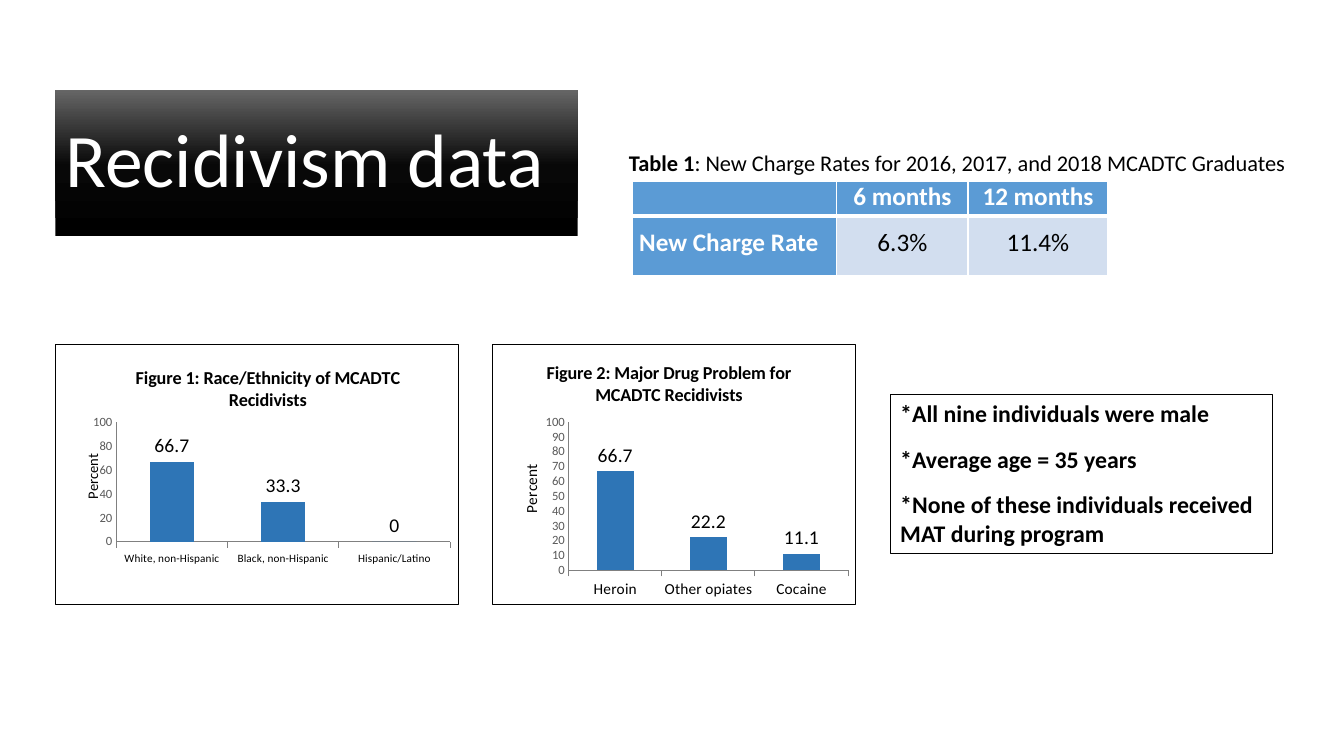
"""Build the recidivism data slide."""
from dataclasses import dataclass

from lxml import etree
from pptx import Presentation
from pptx.chart.data import CategoryChartData
from pptx.dml.color import RGBColor
from pptx.enum.chart import XL_CHART_TYPE, XL_LABEL_POSITION, XL_TICK_LABEL_POSITION, XL_TICK_MARK
from pptx.enum.shapes import MSO_SHAPE
from pptx.enum.text import MSO_ANCHOR, PP_ALIGN
from pptx.oxml import parse_xml
from pptx.oxml.ns import nsdecls, qn
from pptx.util import Inches, Pt

COLUMNS = XL_CHART_TYPE.COLUMN_CLUSTERED
OUTSIDE_END = XL_LABEL_POSITION.OUTSIDE_END
LOW = XL_TICK_LABEL_POSITION.LOW
TICK_NONE, TICK_OUT = XL_TICK_MARK.NONE, XL_TICK_MARK.OUTSIDE
RECTANGLE = MSO_SHAPE.RECTANGLE
TOP, MIDDLE = MSO_ANCHOR.TOP, MSO_ANCHOR.MIDDLE
LEFT, CENTER = PP_ALIGN.LEFT, PP_ALIGN.CENTER


@dataclass(frozen=True)
class Theme:
    font: str = "Calibri"
    black: str = "000000"
    white: str = "FFFFFF"
    header: str = "5B9BD5"
    band: str = "D2DEEF"
    bar: str = "2E75B6"
    axis: str = "808080"
    tick: str = "595959"
    gradient: tuple = ((0, "000000"), (48, "080808"), (100, "666666"))
    title_size: float = 54
    table_size: float = 18
    fact_size: float = 17
    caption_size: float = 16
    label_size: float = 14
    chart_title_size: float = 13
    tick_size: float = 9


class SlideBuilder:
    def __init__(self, slide, theme):
        self.slide = slide
        self.theme = theme

    def style(self, font, size, color, bold=False):
        font.name = self.theme.font
        font.size = Pt(size)
        font.bold = bold
        font.color.rgb = RGBColor.from_string(color)

    def title(self, text, box):
        shape = self.slide.shapes.title
        shape.left, shape.top, shape.width, shape.height = map(Inches, box)
        shape.fill.gradient()
        shape.fill.gradient_angle = 90
        stops = shape._element.spPr.find(qn("a:gradFill")).find(qn("a:gsLst"))
        for stop in list(stops):
            stops.remove(stop)
        for position, color in self.theme.gradient:
            stop = etree.SubElement(stops, qn("a:gs"), pos=str(position * 1000))
            etree.SubElement(stop, qn("a:srgbClr"), val=color)
        shape.text_frame.text = text
        shape.text_frame.vertical_anchor = MIDDLE
        paragraph = shape.text_frame.paragraphs[0]
        paragraph.alignment = LEFT
        paragraph.line_spacing = 0.9
        self.style(paragraph.font, self.theme.title_size, self.theme.white)

    def caption(self, label, text, box):
        frame = self.slide.shapes.add_textbox(*map(Inches, box)).text_frame
        frame.word_wrap = True
        for part, bold in ((label, True), (text, False)):
            run = frame.paragraphs[0].add_run()
            run.text = part
            self.style(run.font, self.theme.caption_size, self.theme.black, bold)

    def fact_box(self, lines, box):
        shape = self.slide.shapes.add_shape(RECTANGLE, *map(Inches, box))
        shape.shadow.inherit = False
        shape.fill.background()
        shape.line.color.rgb = RGBColor.from_string(self.theme.black)
        shape.line.width = Pt(0.75)
        frame = shape.text_frame
        frame.word_wrap = True
        frame.vertical_anchor = TOP
        frame.text = "\n".join(lines)
        for paragraph in frame.paragraphs:
            paragraph.alignment = LEFT
            paragraph.space_after = Pt(12)
            self.style(paragraph.font, self.theme.fact_size, self.theme.black, True)

    def cell_border(self, cell, side, width):
        line = etree.SubElement(cell._tc.get_or_add_tcPr(), qn(f"a:{side}"), w=str(Pt(width)))
        fill = etree.SubElement(line, qn("a:solidFill"))
        etree.SubElement(fill, qn("a:srgbClr"), val=self.theme.white)

    def table(self, rows, box, widths, heights):
        table = self.slide.shapes.add_table(len(rows), len(widths), *map(Inches, box)).table
        for column, width in zip(table.columns, widths):
            column.width = Inches(width)
        for row, height in zip(table.rows, heights):
            row.height = Inches(height)
        for row_index, row in enumerate(rows):
            for column_index, text in enumerate(row):
                cell = table.cell(row_index, column_index)
                heading = row_index == 0 or column_index == 0
                for side in ("lnL", "lnR", "lnT", "lnB"):
                    thick = (row_index, side) in ((0, "lnB"), (1, "lnT"))
                    self.cell_border(cell, side, 3 if thick else 1)
                cell.fill.solid()
                cell.fill.fore_color.rgb = RGBColor.from_string(
                    self.theme.header if heading else self.theme.band)
                cell.margin_left = cell.margin_right = Inches(0.07)
                cell.margin_top = Inches(0.12 if row_index else 0)
                cell.margin_bottom = 0
                cell.text = text
                paragraph = cell.text_frame.paragraphs[0]
                paragraph.alignment = LEFT if row_index and column_index == 0 else CENTER
                self.style(paragraph.font, self.theme.table_size,
                           self.theme.white if heading else self.theme.black, heading)

    def place(self, element, x, y, extra=""):
        layout = parse_xml(
            f'<c:layout {nsdecls("c")}><c:manualLayout>{extra}<c:xMode val="edge"/>'
            f'<c:yMode val="edge"/><c:x val="{x}"/><c:y val="{y}"/></c:manualLayout></c:layout>')
        for old in element.findall(qn("c:layout")):
            element.remove(old)
        text = element.find(qn("c:tx"))
        if text is None:
            element.insert(0, layout)
        else:
            text.addnext(layout)
        return layout[0]

    def chart_heading(self, heading, text, size, bold, position):
        heading.text_frame.text = text
        self.style(heading.text_frame.paragraphs[0].font, size, self.theme.black, bold)
        self.place(heading._element, *position)

    def axis(self, axis, size, color, tick_mark):
        self.style(axis.tick_labels.font, size, color)
        axis.major_tick_mark = tick_mark
        axis.minor_tick_mark = TICK_NONE
        axis.has_major_gridlines = False
        axis.format.line.color.rgb = RGBColor.from_string(self.theme.axis)
        axis.format.line.width = Pt(0.75)

    def column_chart(self, title, values, box, plot_area, title_at, percent_at,
                     category_size, percent_size, step):
        data = CategoryChartData()
        data.categories = list(values)
        data.add_series("Series 1", list(values.values()))
        chart = self.slide.shapes.add_chart(COLUMNS, *map(Inches, box), data).chart
        self.style(chart.font, 10, self.theme.black)
        chart.has_legend = False
        chart.has_title = True
        self.chart_heading(chart.chart_title, title, self.theme.chart_title_size, True, title_at)

        self.axis(chart.category_axis, category_size, self.theme.black, TICK_OUT)
        chart.category_axis.tick_label_position = LOW
        value_axis = chart.value_axis
        self.axis(value_axis, self.theme.tick_size, self.theme.tick, TICK_NONE)
        value_axis.minimum_scale, value_axis.maximum_scale = 0, 100
        value_axis.major_unit = step
        value_axis.has_title = True
        self.chart_heading(value_axis.axis_title, "Percent", percent_size, False, percent_at)
        value_axis.axis_title.text_frame._txBody.bodyPr.set("rot", "-5400000")

        plot = chart.plots[0]
        plot.gap_width = 150
        plot.vary_by_categories = False
        plot.series[0].format.fill.solid()
        plot.series[0].format.fill.fore_color.rgb = RGBColor.from_string(self.theme.bar)
        plot.has_data_labels = True
        labels = plot.data_labels
        labels.show_value = True
        labels.position = OUTSIDE_END
        self.style(labels.font, self.theme.label_size, self.theme.black)

        x, y, width, height = plot_area
        chart_element = chart._chartSpace.find(qn("c:chart"))
        layout = self.place(chart_element.find(qn("c:plotArea")), x, y,
                            '<c:layoutTarget val="inner"/>')
        etree.SubElement(layout, qn("c:w"), val=str(width))
        etree.SubElement(layout, qn("c:h"), val=str(height))
        chart_element.addnext(parse_xml(
            f'<c:spPr {nsdecls("c", "a")}><a:solidFill><a:srgbClr val="{self.theme.white}"/>'
            f'</a:solidFill><a:ln w="{Pt(0.75)}"><a:solidFill>'
            f'<a:srgbClr val="{self.theme.black}"/></a:solidFill></a:ln></c:spPr>'))


def main():
    presentation = Presentation()
    presentation.slide_width, presentation.slide_height = Inches(13.33), Inches(7.5)
    slide = presentation.slides.add_slide(presentation.slide_layouts[5])
    builder = SlideBuilder(slide, Theme())
    builder.title("Recidivism data", (0.55, 0.89, 5.18, 1.45))
    builder.table([("", "6 months", "12 months"), ("New Charge Rate", "6.3%", "11.4%")],
                  (6.27, 1.8, 4.72, 0.93), (2.03, 1.3, 1.39), (0.34, 0.59))
    builder.caption("Table 1", ": New Charge Rates for 2016, 2017, and 2018 MCADTC Graduates",
                    (6.14, 1.43, 6.9, 0.37))
    builder.fact_box(("*All nine individuals were male", "*Average age = 35 years",
                      "*None of these individuals received MAT during program"),
                     (8.83, 3.91, 3.79, 1.58))
    builder.column_chart("Figure 2: Major Drug Problem for MCADTC Recidivists",
                         {"Heroin": 66.7, "Other opiates": 22.2, "Cocaine": 11.1},
                         (4.88, 3.41, 3.61, 2.59), (0.21, 0.3, 0.77, 0.57),
                         (0.14, 0.05), (0.07, 0.45), 11, 11, 10)
    builder.column_chart("Figure 1: Race/Ethnicity of MCADTC Recidivists",
                         {"White, non-Hispanic": 66.7, "Black, non-Hispanic": 33.3,
                          "Hispanic/Latino": 0},
                         (0.55, 3.41, 4, 2.59), (0.15, 0.3, 0.83, 0.46),
                         (0.19, 0.07), (0.06, 0.41), 8, 10.5, 20)
    presentation.save("out.pptx")


if __name__ == "__main__":
    main()
